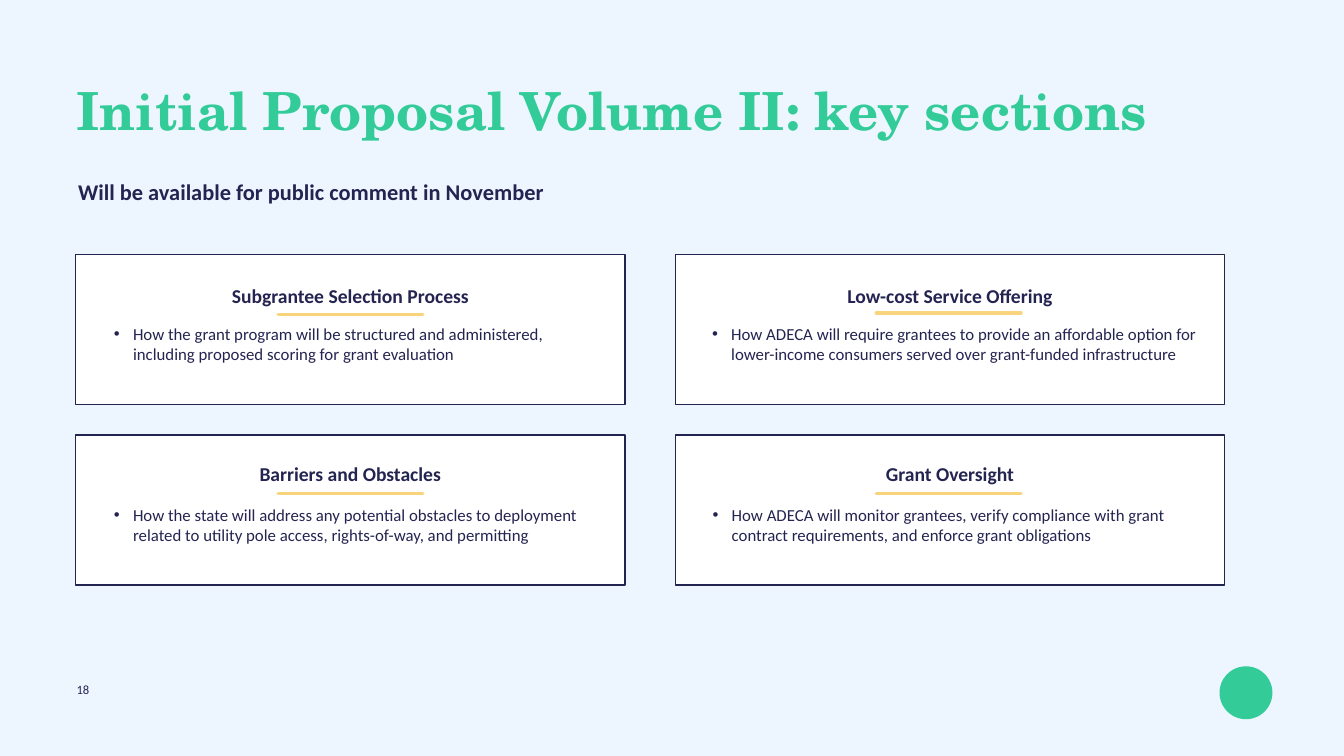
from lxml.etree import SubElement
from pptx import Presentation
from pptx.dml.color import RGBColor
from pptx.enum.shapes import MSO_CONNECTOR as Connector, MSO_SHAPE as Shape
from pptx.enum.text import MSO_ANCHOR as Anchor, MSO_AUTO_SIZE as AutoSize, PP_ALIGN as Align
from pptx.oxml.ns import qn
from pptx.util import Inches, Pt

NAVY, GREEN, YELLOW, WHITE, PALE_BLUE = "242451", "33CC99", "F8D57C", "FFFFFF", "EDF5FF"
BODY_FONT, TITLE_FONT = "Calibri", "TeX Gyre Schola"

COLUMNS = (1.5, 13.4)
CARD_WIDTH, CARD_HEIGHT = 10.9, 2.98
RULE_WIDTH = 2.87

# Card top, heading top, list top
ROWS = ((5.05, 5.63, 6.37), (8.63, 9.16, 9.96))

# Heading, list item, list left, list width, rule left, rule height on the slide
CARDS = (
    ("Subgrantee Selection Process",
     "How the grant program will be structured and administered, "
     "including proposed scoring for grant evaluation", 2.16, 9.98, 5.52, 6.24),
    ("Low-cost Service Offering",
     "How ADECA will require grantees to provide an affordable option for "
     "lower-income consumers served over grant-funded infrastructure", 14.03, 9.92, 17.39, 6.21),
    ("Barriers and Obstacles",
     "How the state will address any potential obstacles to deployment "
     "related to utility pole access, rights-of-way, and permitting", 2.16, 9.86, 5.52, 9.79),
    ("Grant Oversight",
     "How ADECA will monitor grantees, verify compliance with grant "
     "contract requirements, and enforce grant obligations", 14.04, 9.86, 17.39, 9.79),
)


def color(value):
    return RGBColor.from_string(value)


def add_bullet(paragraph):
    properties = paragraph._p.get_or_add_pPr()
    properties.set("marL", str(Inches(0.38)))
    properties.set("indent", str(-Inches(0.38)))
    bullet_color = SubElement(properties, qn("a:buClr"))
    SubElement(bullet_color, qn("a:srgbClr")).set("val", NAVY)
    SubElement(properties, qn("a:buFont")).set("typeface", "Arial")
    SubElement(properties, qn("a:buChar")).set("char", "•")


def fill_text(shape, box, text, size, bold=False, spacing=0.9, align=Align.LEFT,
              font_name=BODY_FONT, font_color=NAVY, bullet=False):
    """Place a text box or placeholder and set its formatted text."""
    shape.left, shape.top, shape.width, shape.height = map(Inches, box)
    frame = shape.text_frame
    frame.word_wrap = True
    frame.auto_size = AutoSize.NONE
    frame.vertical_anchor = Anchor.TOP
    frame.text = text
    paragraph = frame.paragraphs[0]
    paragraph.alignment = align
    paragraph.line_spacing = spacing
    paragraph.space_before = Pt(0)
    if bullet:
        add_bullet(paragraph)
    font = paragraph.runs[0].font
    font.name, font.size, font.bold = font_name, Pt(size), bold
    font.color.rgb = color(font_color)


def add_text(slide, box, text, size, **style):
    fill_text(slide.shapes.add_textbox(0, 0, 0, 0), box, text, size, **style)


def add_filled_shape(slide, kind, box, fill, line=None):
    shape = slide.shapes.add_shape(kind, *map(Inches, box))
    shape.shadow.inherit = False
    shape.fill.solid()
    shape.fill.fore_color.rgb = color(fill)
    if line:
        shape.line.color.rgb = color(line)
        shape.line.width = Pt(2)
    else:
        shape.line.fill.background()


def add_rule(slide, left, top):
    rule = slide.shapes.add_connector(
        Connector.STRAIGHT, Inches(left + RULE_WIDTH), Inches(top), Inches(left), Inches(top))
    rule.line.color.rgb = color(YELLOW)
    rule.line.width = Pt(5)
    rule.line._get_or_add_ln().set("cap", "rnd")
    SubElement(rule._element.spPr, qn("a:effectLst"))


def add_card(slide, placeholder, column, row, card):
    heading, item, list_left, list_width, rule_left, rule_top = card
    card_top, heading_top, list_top = row
    add_filled_shape(slide, Shape.RECTANGLE,
                     (column, card_top, CARD_WIDTH, CARD_HEIGHT), WHITE, NAVY)
    add_text(slide, (column, heading_top, CARD_WIDTH, 0.53), heading, 28,
             bold=True, align=Align.CENTER)
    fill_text(placeholder, (list_left, list_top, list_width, 1.31), item, 24,
              spacing=1.0, bullet=True)
    slide.shapes._spTree.append(placeholder._element)  # bring the list in front of its card
    add_rule(slide, rule_left, rule_top)


def main():
    presentation = Presentation()
    presentation.slide_width, presentation.slide_height = Inches(26.67), Inches(15)
    comparison_layout = presentation.slide_layouts[4]
    slide = presentation.slides.add_slide(comparison_layout)
    slide.background.fill.solid()
    slide.background.fill.fore_color.rgb = color(PALE_BLUE)

    title, *lists = slide.placeholders
    fill_text(title, (1.42, 1.63, 23.76, 1.24), "Initial Proposal Volume II: key sections", 75,
              bold=True, font_name=TITLE_FONT, font_color=GREEN)
    add_text(slide, (1.45, 3.32, 23.77, 0.81),
             "Will be available for public comment in November", 32, bold=True, spacing=1.31)

    cells = [(column, row) for row in ROWS for column in COLUMNS]
    for placeholder, (column, row), card in zip(lists, cells, CARDS):
        add_card(slide, placeholder, column, row, card)

    add_filled_shape(slide, Shape.OVAL, (24.2, 13.22, 1.05, 1.05), GREEN)
    add_text(slide, (1.42, 13.52, 19.18, 0.37), "18", 18)
    presentation.save("out.pptx")


if __name__ == "__main__":
    main()
